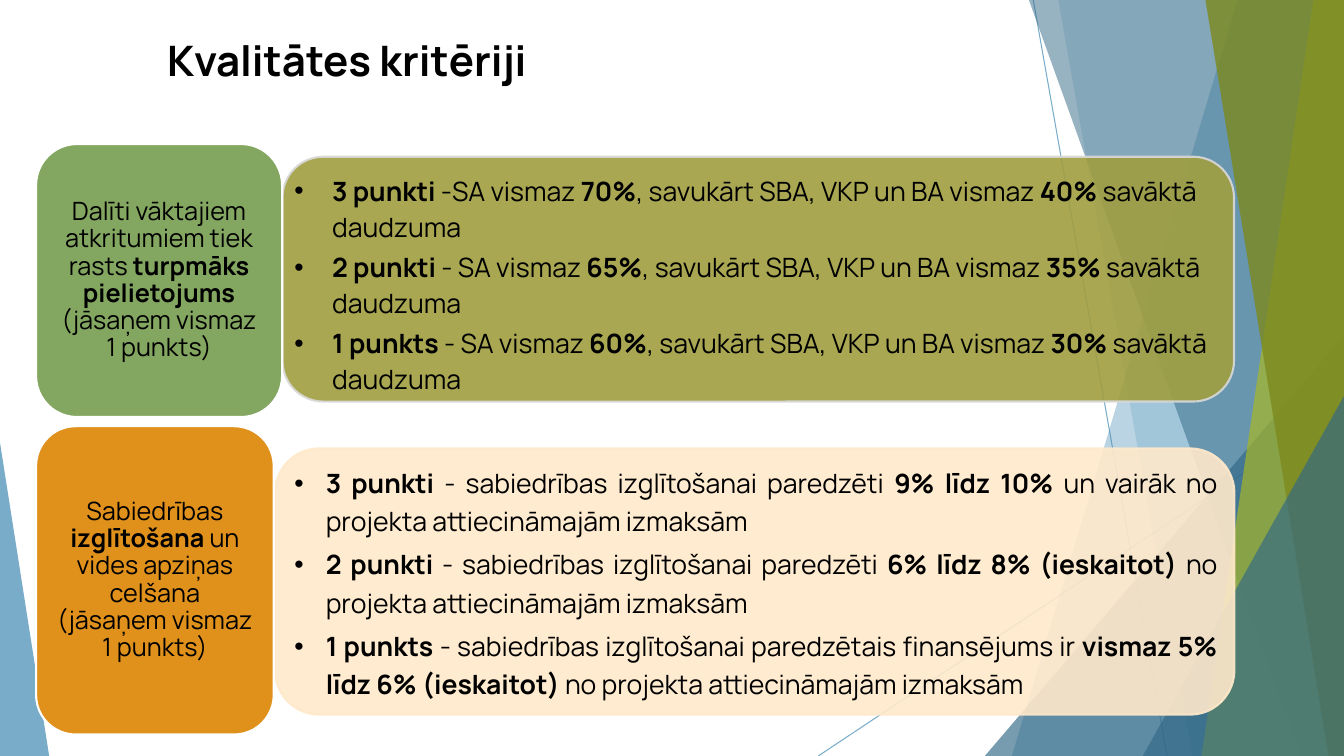
from lxml.etree import SubElement as Sub
from pptx import Presentation
from pptx.dml.color import RGBColor as RGB
from pptx.enum.shapes import MSO_CONNECTOR as LINK, MSO_SHAPE as FORM
from pptx.enum.text import MSO_ANCHOR as ANCHOR, MSO_AUTO_SIZE as AUTO, PP_ALIGN as ALIGN
from pptx.oxml.ns import qn
from pptx.util import Cm, Pt

FONT = "Manrope"
WIDE, HIGH = 33.87, 19.05
HUES = {
    "black": "000000", "white": "FFFFFF", "grey": "D9D9D9",
    "blue": "418AB3", "navy": "316886", "lime": "A6B727", "moss": "7D891D",
    "olive": "A09E40", "green": "83A660", "peach": "FFE9CB", "orange": "E0911C",
}

# Text: ** switches bold on and off
REUSE = ["Dalīti vāktajiem atkritumiem tiek rasts **turpmāks pielietojums **"
         "(jāsaņem vismaz 1 punkts)"]
TEACH = ["Sabiedrības **izglītošana** un vides apziņas celšana",
         "(jāsaņem vismaz 1 punkts)"]
SHARES = [
    f"**{mark} **{dash}SA vismaz **{main}%**, savukārt SBA, VKP un BA vismaz "
    f"**{rest}%** savāktā daudzuma"
    for mark, dash, main, rest in [("3 punkti", "-", 70, 40),
                                   ("2 punkti", "- ", 65, 35),
                                   ("1 punkts", "- ", 60, 30)]
]
COSTS = [
    f"**{mark} **- sabiedrības izglītošanai {verb} **{span} **{tail}"
    "no projekta attiecināmajām izmaksām"
    for mark, verb, span, tail in [
        ("3 punkti", "paredzēti", "9% līdz 10%", "un vairāk "),
        ("2 punkti", "paredzēti", "6% līdz 8% (ieskaitot)", ""),
        ("1 punkts", "paredzētais finansējums ir", "vismaz 5% līdz 6% (ieskaitot)", "")]
]


def hue(name):
    return RGB.from_string(HUES[name])


def fade(shape, part):
    """Set the opacity, in percent, of every colour of a shape."""
    for clr in list(shape._element.spPr.iter(qn("a:srgbClr"))):
        Sub(clr, qn("a:alpha"), val=str(part * 1000))


def paint(shape, fill, part=100, edge=None):
    shape.shadow.inherit = False
    shape.fill.solid()
    shape.fill.fore_color.rgb = hue(fill)
    if edge:
        shape.line.color.rgb = hue(edge)
        shape.line.width = Pt(1.5)
    else:
        shape.line.fill.background()
    if part < 100:
        fade(shape, part)


def pad(box, left, top, right, low):
    box.margin_left, box.margin_top = Cm(left), Cm(top)
    box.margin_right, box.margin_bottom = Cm(right), Cm(low)


def bullet(para, dent, tabs):
    props = para._p.get_or_add_pPr()
    props.set("marL", str(Cm(dent)))
    props.set("indent", str(-Cm(dent)))
    Sub(props, qn("a:buFont"), typeface="Arial")
    Sub(props, qn("a:buChar"), char="•")
    if tabs:
        stops = Sub(props, qn("a:tabLst"))
        for tab in tabs:
            Sub(stops, qn("a:tab"), pos=str(Cm(tab)), algn="l")


def write(frame, lines, size, align=ALIGN.LEFT, space=1.0, after=0, dent=0, tabs=()):
    for row, line in enumerate(lines):
        para = frame.add_paragraph() if row else frame.paragraphs[0]
        para.alignment = align
        para.line_spacing = space
        para.space_after = Pt(after)
        if dent:
            bullet(para, dent, tabs)
        para.font.name, para.font.size = FONT, Pt(size)
        para.font.color.rgb = hue("black")
        for turn, words in enumerate(line.split("**")):
            if words:
                run = para.add_run()
                run.text = words
                run.font.bold = turn % 2 == 1


def ray(shapes, *ends):
    line = shapes.add_connector(LINK.STRAIGHT, *map(Cm, ends))
    line.line.color.rgb = hue("blue")
    line.line.width = Pt(0.75)
    fade(line, 70)
    Sub(line._element.spPr, qn("a:effectLst"))


def shard(shapes, top, low, fill, part):
    """Full-height band from a slanted left edge to the slide's right edge."""
    form = shapes.build_freeform(Cm(top), 0)
    form.add_line_segments([(Cm(x), Cm(y)) for x, y in
                            [(WIDE, 0), (WIDE, HIGH), (low, HIGH)]])
    paint(form.convert_to_shape(), fill, part)


def wedge(shapes, left, top, width, tip, fill, part):
    """Triangle standing on the slide's bottom edge."""
    shape = shapes.add_shape(FORM.ISOSCELES_TRIANGLE, Cm(left), Cm(top),
                             Cm(width), Cm(HIGH - top))
    shape.adjustments[0] = tip
    paint(shape, fill, part)


def panel(shapes, place, fill, edge):
    shape = shapes.add_shape(FORM.ROUNDED_RECTANGLE, *map(Cm, place))
    paint(shape, fill, 90, edge)


def card(shapes, place, fill, lines):
    shape = shapes.add_shape(FORM.ROUNDED_RECTANGLE, *map(Cm, place))
    paint(shape, fill, edge="white")
    frame = shape.text_frame
    frame.word_wrap = True
    frame.vertical_anchor = ANCHOR.MIDDLE
    pad(frame, 0.18, 0.1, 0.18, 0.1)
    write(frame, lines, 18, ALIGN.CENTER, 0.9)


def points(shapes, top, lines, **style):
    """One-cell table with the scoring rules."""
    table = shapes.add_table(1, 1, Cm(6.81), Cm(top), Cm(24.05), Cm(6.4)).table
    table.first_row = table.horz_banding = False
    look = table._tbl.tblPr.find(qn("a:tableStyleId"))
    look.text = "{2D5ABB26-0587-4C30-8999-92F81FD0307C}"  # no style, no grid
    cell = table.cell(0, 0)
    cell.fill.background()
    cell.vertical_anchor = ANCHOR.MIDDLE
    pad(cell, 0.61, 0, 0.18, 0)
    write(cell.text_frame, lines, 19, after=3, **style)


def title(shapes, text):
    frame = shapes.add_textbox(Cm(3.96), Cm(0.74), Cm(22.1), Cm(1.55)).text_frame
    frame.word_wrap = True
    frame.auto_size = AUTO.SHAPE_TO_FIT_TEXT
    write(frame, [f"**{text}**"], 30)


def main():
    deck = Presentation()
    deck.slide_width, deck.slide_height = Cm(WIDE), Cm(HIGH)
    shapes = deck.slides.add_slide(deck.slide_layouts[6]).shapes

    # Backdrop
    ray(shapes, 26.04, 0, 29.41, HIGH)
    ray(shapes, WIDE, 10.24, 20.62, HIGH)
    shard(shapes, 31.19, 25.5, "blue", 36)
    shard(shapes, 26.67, 30.05, "blue", 20)
    wedge(shapes, 24.82, 8.46, 9.05, 1, "navy", 66)
    shard(shapes, 25.93, 32.79, "navy", 50)
    shard(shapes, 33.1, 30.28, "lime", 70)
    shard(shapes, 30.38, 33.48, "moss", 80)
    wedge(shapes, 28.8, 9.98, 5.07, 1, "navy", 66)
    wedge(shapes, 0, 11.15, 1.24, 0, "blue", 70)

    title(shapes, "Kvalitātes kritēriji")

    # Criteria: panel behind, card at left
    panel(shapes, (7.12, 3.95, 23.98, 6.17), "olive", "grey")
    card(shapes, (0.91, 3.63, 6.2, 6.88), "green", REUSE)
    panel(shapes, (6.93, 11.3, 24.18, 6.71), "peach", "peach")
    card(shapes, (0.91, 10.74, 5.99, 7.77), "orange", TEACH)

    # Scores
    points(shapes, 11.48, COSTS, align=ALIGN.JUSTIFY, space=1.07,
           dent=0.79, tabs=(1.65, 2.21))
    points(shapes, 3.99, SHARES, dent=0.95)

    deck.save("out.pptx")


if __name__ == "__main__":
    main()
